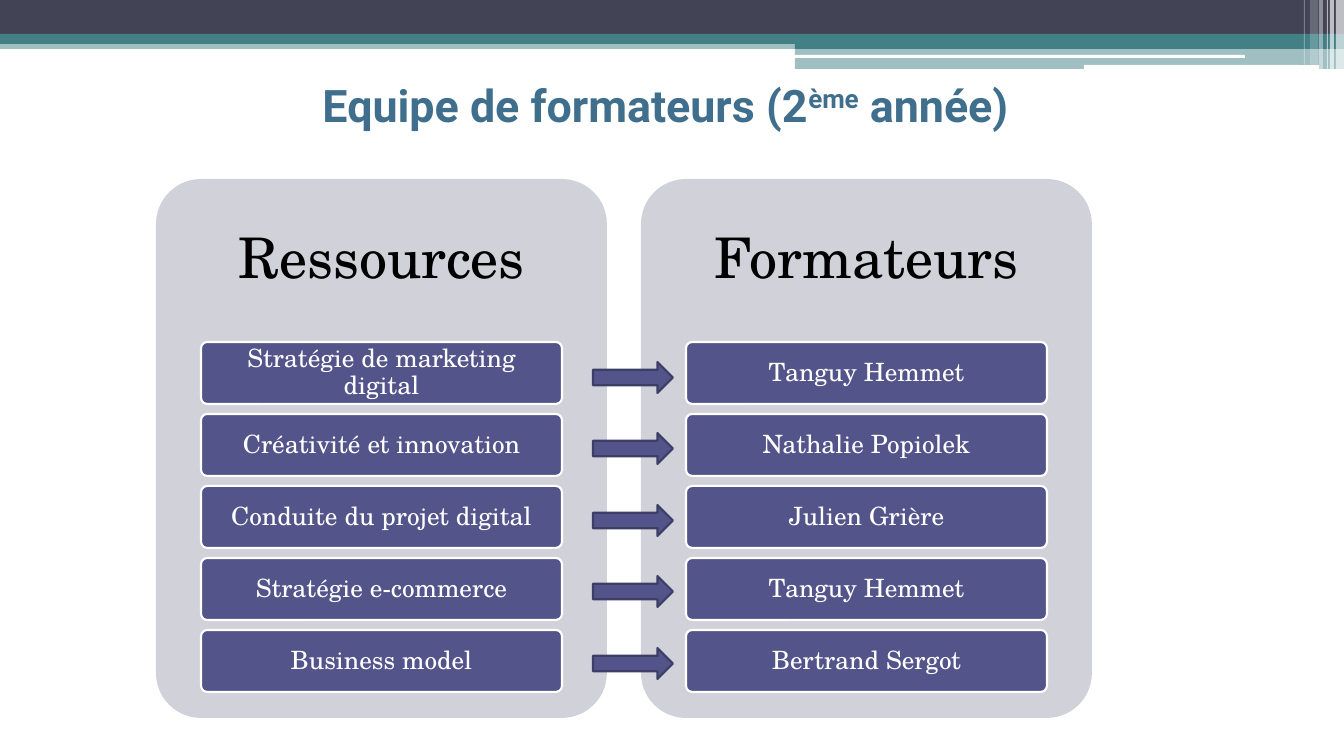
from pptx import Presentation
from pptx.dml.color import RGBColor
from pptx.enum.shapes import MSO_SHAPE
from pptx.enum.text import MSO_ANCHOR, PP_ALIGN
from pptx.oxml.ns import qn
from pptx.util import Pt
from lxml import etree

RECT, ROUND, ARROW = MSO_SHAPE.RECTANGLE, MSO_SHAPE.ROUNDED_RECTANGLE, MSO_SHAPE.RIGHT_ARROW
MIDDLE, CENTER = MSO_ANCHOR.MIDDLE, PP_ALIGN.CENTER

WHITE = RGBColor(0xFF, 0xFF, 0xFF)
BLACK = RGBColor(0x00, 0x00, 0x00)
NAVY = RGBColor(0x42, 0x44, 0x56)
TEAL = RGBColor(0x43, 0x80, 0x86)
TITLE_BLUE = RGBColor(0x40, 0x6F, 0x8D)
PANEL = RGBColor(0xD1, 0xD1, 0xDA)
VIOLET = RGBColor(0x53, 0x54, 0x8A)
VIOLET_DARK = RGBColor(0x3D, 0x3E, 0x66)

# Content
TITLE = [("Equipe de formateurs (2", False), ("ème", True), (" année)", False)]
COLUMNS = [
    ("Ressources", ["Stratégie de marketing digital", "Créativité et innovation",
                    "Conduite du projet digital", "Stratégie e-commerce", "Business model"]),
    ("Formateurs", ["Tanguy Hemmet", "Nathalie Popiolek", "Julien Grière",
                    "Tanguy Hemmet", "Bertrand Sergot"]),
]

# Banner bands: kind, (left, top, width, height) in px, colour, opacity %
BANNER = [
    (RECT, (0, 40, 1344, 9), TEAL, 50),
    (RECT, (0, 0, 1344, 34), NAVY, 100),
    (RECT, (0, 34, 1344, 10), TEAL, 100),
    (RECT, (795, 39, 549, 10), TEAL, 100),
    (RECT, (795, 49, 549, 20), TEAL, 50),
    (ROUND, (794, 55, 451, 3), WHITE, 100),
    (ROUND, (1084, 65, 235, 4), WHITE, 100),
]
# Vertical stripes at the right: left, width, height, opacity %
STRIPES = [(1336, 8, 69, 65), (1330, 4, 69, 65), (1327, 1, 69, 60),
           (1319, 4, 69, 40), (1310, 8, 65, 20), (1304, 1, 65, 30)]

# Layout in px
W, H = 1344, 756
EMU_PER_PX = 12192000 / W
PANEL_X, PANEL_Y, PANEL_W, PANEL_H, PANEL_STEP = 156, 179, 451, 539, 485
HEADER_H = 162
PILL_INSET, PILL_Y, PILL_W, PILL_H, PILL_STEP = 45, 342, 361, 62, 72
ARROW_X, ARROW_Y, ARROW_W, ARROW_H, ARROW_SPAN = 593, 362, 80, 31, 286


def px(*values):
    return [round(v * EMU_PER_PX) for v in values]


def add_block(kind, box, color, opacity=100, line=None, adj=None):
    sp = slide.shapes.add_shape(kind, *px(*box))
    sp.shadow.inherit = False
    sp.fill.solid()
    sp.fill.fore_color.rgb = color
    if opacity < 100:
        clr = sp.fill._xPr.find(qn("a:solidFill"))[0]
        etree.SubElement(clr, qn("a:alpha")).set("val", str(opacity * 1000))
    if line is None:
        sp.line.fill.background()
    else:
        sp.line.color.rgb = line
        sp.line.width = Pt(1.5)
    if adj is not None:
        sp.adjustments[0] = adj
    return sp


def add_text(sp, runs, font, size, color, insets, bold=False, spacing=None):
    tf = sp.text_frame
    sides = ("margin_left", "margin_top", "margin_right", "margin_bottom")
    frame = {"word_wrap": True, "vertical_anchor": MIDDLE, **dict(zip(sides, px(*insets)))}
    for name, value in frame.items():
        setattr(tf, name, value)
    p = tf.paragraphs[0]
    p.alignment = CENTER
    p.line_spacing = spacing
    for text, raised in runs:
        r = p.add_run()
        r.text = text
        for name, value in {"name": font, "size": Pt(size), "bold": bold}.items():
            setattr(r.font, name, value)
        r.font.color.rgb = color
        if raised:
            r._r.get_or_add_rPr().set("baseline", "30000")
    return p


prs = Presentation()
prs.slide_width, prs.slide_height = px(W, H)
slide = prs.slides.add_slide(prs.slide_layouts[6])

# Banner
for kind, box, color, opacity in BANNER:
    add_block(kind, box, color, opacity)
for left, width, height, opacity in STRIPES:
    add_block(RECT, (left, 0, width, height), WHITE, opacity)

# Title
sp = slide.shapes.add_textbox(*px(77, 44, 1165, 121))
p = add_text(sp, TITLE, "Roboto", 32, TITLE_BLUE, (10, 5, 10, 5), bold=True)
p.space_before = Pt(3)
margin, indent = px(40, -28)
pPr = p._p.get_or_add_pPr()
pPr.set("marL", str(margin))
pPr.set("indent", str(indent))

# Panels with their header and items
for col, (header, items) in enumerate(COLUMNS):
    x = PANEL_X + col * PANEL_STEP
    add_block(ROUND, (x, PANEL_Y, PANEL_W, PANEL_H), PANEL, adj=0.1)
    sp = slide.shapes.add_textbox(*px(x, PANEL_Y, PANEL_W, HEADER_H))
    add_text(sp, [(header, False)], "TeX Gyre Schola", 40, BLACK, (17, 17, 17, 17), spacing=0.9)
    for row, item in enumerate(items):
        box = (x + PILL_INSET, PILL_Y + row * PILL_STEP, PILL_W, PILL_H)
        sp = add_block(ROUND, box, VIOLET, line=WHITE, adj=0.1)
        add_text(sp, [(item, False)], "TeX Gyre Schola", 18, WHITE, (5, 4, 5, 4), spacing=0.9)

# Arrows from each resource to its trainer
rows = len(COLUMNS[0][1])
for row in range(rows):
    y = ARROW_Y + row * ARROW_SPAN // (rows - 1)
    add_block(ARROW, (ARROW_X, y, ARROW_W, ARROW_H), VIOLET, line=VIOLET_DARK)

prs.save("out.pptx")
